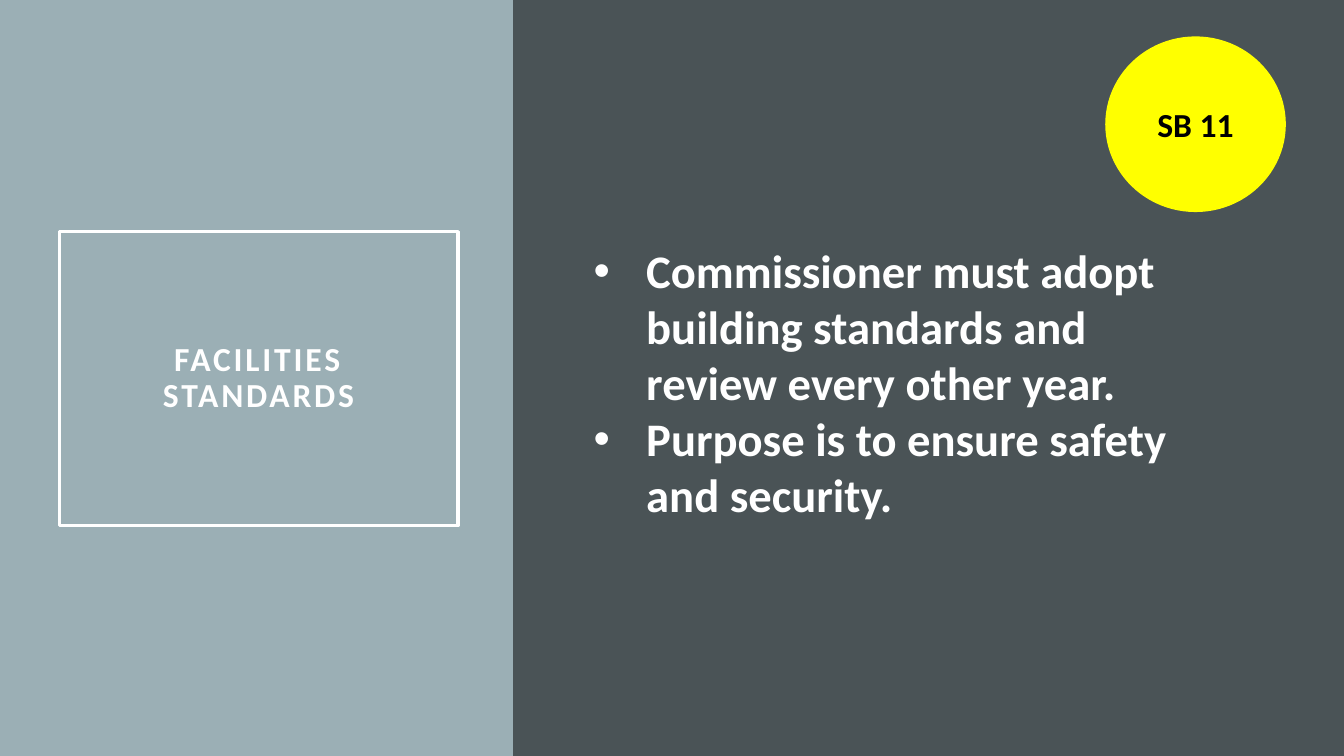
from lxml import etree
from pptx import Presentation
from pptx.dml.color import RGBColor
from pptx.enum.shapes import MSO_SHAPE as SHAPE
from pptx.enum.text import MSO_ANCHOR as ANCHOR, PP_ALIGN as ALIGN
from pptx.oxml.ns import qn
from pptx.util import Pt

WHITE, SLATE, MIST, YELLOW = "FFFFFF", "4A5356", "9BAFB5", "FFFF00"


def add_box(kind, x, y, w, h, fill=None, line=None, line_width=1):
    sp = s.shapes.add_shape(kind, Pt(x), Pt(y), Pt(w), Pt(h))
    sp.shadow.inherit = False
    for part, color in ((sp.fill, fill), (sp.line.fill, line)):
        if color:
            part.solid()
            part.fore_color.rgb = RGBColor.from_string(color)
        else:
            part.background()
    if line:
        sp.line.width = Pt(line_width)
    return sp


def write(sp, *paragraphs, size=24, color=WHITE, align=ALIGN.CENTER,
          line_spacing=1.0, letter_spacing=0, bullet_indent=0):
    tf = sp.text_frame
    tf.word_wrap = True
    tf.vertical_anchor = ANCHOR.MIDDLE
    for i, text in enumerate(paragraphs):
        p = tf.add_paragraph() if i else tf.paragraphs[0]
        p.text = text
        p.alignment = align
        p.line_spacing = line_spacing
        if bullet_indent:
            pPr = p._p.get_or_add_pPr()
            pPr.set("marL", str(Pt(bullet_indent)))
            pPr.set("indent", str(-Pt(bullet_indent)))
            etree.SubElement(pPr, qn("a:buFont")).set("typeface", "Arial")
            etree.SubElement(pPr, qn("a:buChar")).set("char", "•")
        for r in p.runs:
            r.font.name = "Calibri"
            r.font.size = Pt(size)
            r.font.bold = True
            r.font.color.rgb = RGBColor.from_string(color)
            if letter_spacing:
                r._r.get_or_add_rPr().set("spc", str(letter_spacing * 100))
    return tf


prs = Presentation()
prs.slide_width, prs.slide_height = Pt(960), Pt(540)
s = prs.slides.add_slide(prs.slide_layouts[6])
s.background.fill.solid()
s.background.fill.fore_color.rgb = RGBColor.from_string(SLATE)

# Left and right panels
split = 366.5
add_box(SHAPE.RECTANGLE, 0, 0, split, 540, fill=MIST)
add_box(SHAPE.RECTANGLE, split, 0, 960 - split, 540, fill=SLATE)

# Framed title
title = add_box(SHAPE.RECTANGLE, 42.5, 165.5, 284.5, 210, line=WHITE, line_width=2.5)
tf = write(title, "FACILITIES\vSTANDARDS", line_spacing=0.9, letter_spacing=2)
tf.margin_left = tf.margin_right = tf.margin_top = tf.margin_bottom = Pt(14.4)

# Bullet list
body = s.shapes.add_textbox(Pt(417), Pt(94.5), Pt(458.5), Pt(357))
write(body,
      "Commissioner must adopt building standards and review every other year.",
      "Purpose is to ensure safety and security.",
      size=33.3, align=ALIGN.LEFT, bullet_indent=37.5)

# Bill badge
badge = add_box(SHAPE.OVAL, 790, 26.5, 128, 124.5, fill=YELLOW, line=YELLOW)
write(badge, "SB 11", color="000000")

prs.save("out.pptx")
